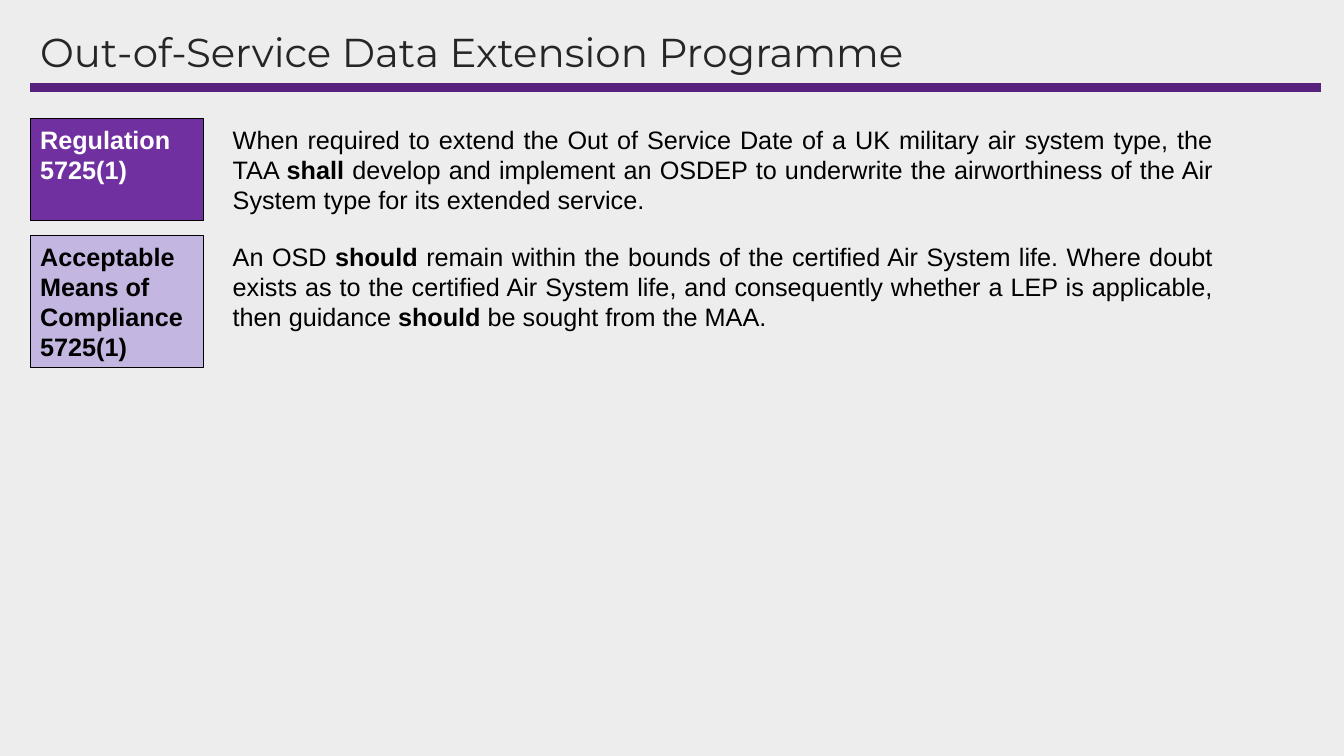
"""Build the Out-of-Service Data Extension Programme slide."""
from lxml import etree
from pptx import Presentation
from pptx.dml.color import RGBColor
from pptx.enum.shapes import MSO_CONNECTOR, MSO_SHAPE
from pptx.enum.text import MSO_ANCHOR, PP_ALIGN
from pptx.oxml.ns import qn
from pptx.util import Inches, Pt

COLOURS = {
    "background": "EDEDED",
    "rule": "56227D",
    "title": "262626",
    "regulation": "7030A0",
    "compliance": "C3B6E0",
    "black": "000000",
    "white": "FFFFFF",
}


def colour(name):
    return RGBColor.from_string(COLOURS[name])


def write_text(shape, text, size=18, font="Arial", color="black", bold=False,
               align=PP_ALIGN.LEFT, anchor=MSO_ANCHOR.TOP, line_spacing=None):
    """Fill a shape with one paragraph; parts between asterisks are bold."""
    frame = shape.text_frame
    frame.word_wrap = True
    frame.vertical_anchor = anchor
    paragraph = frame.paragraphs[0]
    paragraph.alignment = align
    paragraph.line_spacing = line_spacing
    for index, part in enumerate(text.split("*")):
        run = paragraph.add_run()
        run.text = part
        run.font.size = Pt(size)
        run.font.name = font
        run.font.bold = bold or index % 2 == 1
        run.font.color.rgb = colour(color)


presentation = Presentation()
presentation.slide_width = Inches(13.33)
presentation.slide_height = Inches(7.5)
slide = presentation.slides.add_slide(presentation.slide_layouts[6])
slide.background.fill.solid()
slide.background.fill.fore_color.rgb = colour("background")

rule = slide.shapes.add_connector(
    MSO_CONNECTOR.STRAIGHT, Inches(0.3), Inches(0.87), Inches(13.1), Inches(0.87))
rule.line.color.rgb = colour("rule")
rule.line.width = Pt(6)
etree.SubElement(rule._element.spPr, qn("a:effectLst"))

title = slide.shapes.add_textbox(Inches(0.3), Inches(0.28), Inches(12.8), Inches(0.53))
write_text(title, "Out-of-Service Data Extension Programme", size=28.8, font="Montserrat",
           color="title", anchor=MSO_ANCHOR.MIDDLE, line_spacing=0.9)

sections = [
    (1.18, 1.01, "regulation", "white", "Regulation 5725(1)",
     "When required to extend the Out of Service Date of a UK military air system type, "
     "the TAA *shall* develop and implement an OSDEP to underwrite the airworthiness of "
     "the Air System type for its extended service."),
    (2.34, 1.31, "compliance", "black", "Acceptable Means of Compliance 5725(1)",
     "An OSD *should* remain within the bounds of the certified Air System life. Where "
     "doubt exists as to the certified Air System life, and consequently whether a LEP is "
     "applicable, then guidance *should* be sought from the MAA."),
]
for top, height, fill, label_color, label_text, body_text in sections:
    label = slide.shapes.add_shape(
        MSO_SHAPE.RECTANGLE, Inches(0.3), Inches(top), Inches(1.72), Inches(height))
    label.shadow.inherit = False
    label.fill.solid()
    label.fill.fore_color.rgb = colour(fill)
    label.line.color.rgb = colour("black")
    label.line.width = Pt(0.75)
    write_text(label, label_text, color=label_color, bold=True)

    body = slide.shapes.add_textbox(Inches(2.21), Inches(top), Inches(9.92), Inches(1.01))
    write_text(body, body_text, align=PP_ALIGN.JUSTIFY)

presentation.save("out.pptx")
